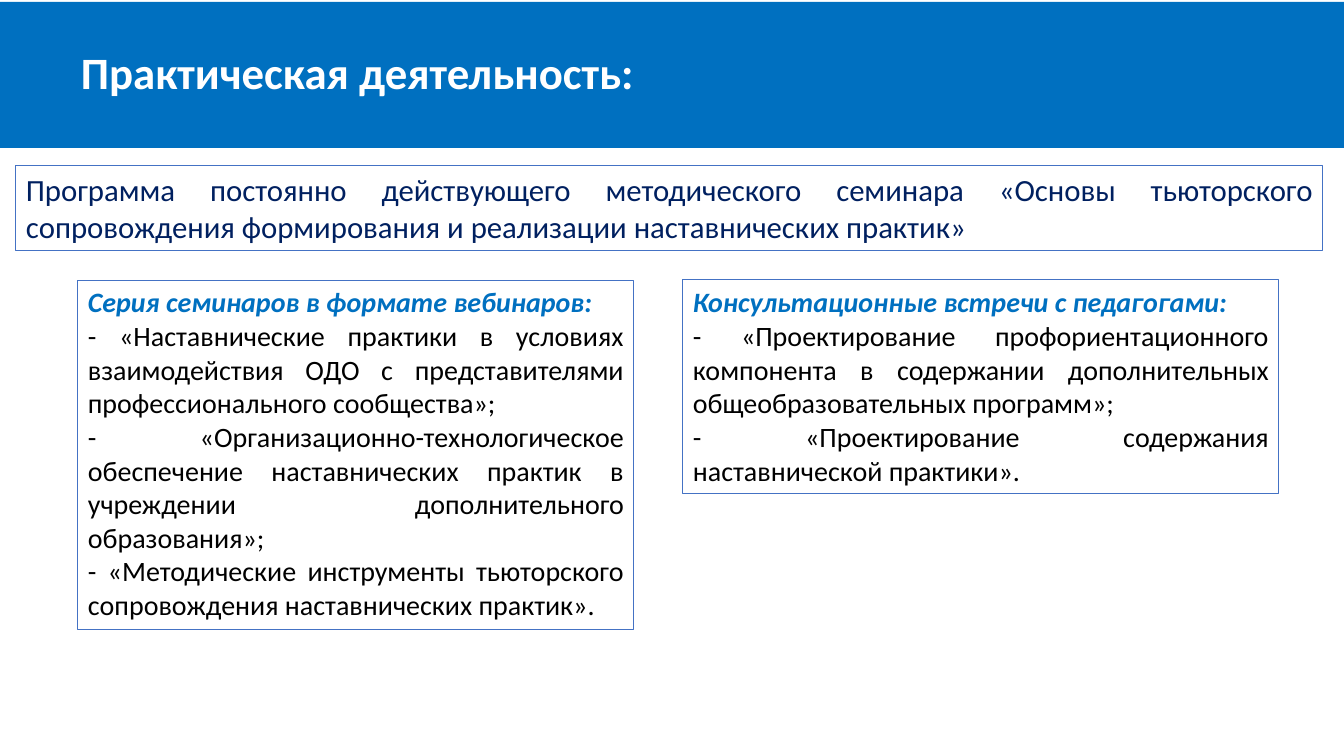
from pptx import Presentation
from pptx.dml.color import RGBColor as RGB
from pptx.enum.text import MSO_ANCHOR as Anchor, MSO_AUTO_SIZE as Fit, PP_ALIGN as Align
from pptx.util import Pt

PX = 914400 / 100.8
BLUE = RGB(0x00, 0x70, 0xC0)
NAVY = RGB(0x00, 0x20, 0x60)
EDGE = RGB(0x44, 0x72, 0xC4)
BLACK = RGB(0, 0, 0)
WHITE = RGB(255, 255, 255)

BANNER = {"size": Pt(32), "bold": True, "color": WHITE}
LEAD = {"size": Pt(22), "color": NAVY}
HEAD = {"size": Pt(20), "bold": True, "italic": True, "color": BLUE}
BODY = {"size": Pt(20), "color": BLACK}

WEBINARS = [
    "Серия семинаров в формате вебинаров:",
    "- «Наставнические практики в условиях взаимодействия ОДО с представителями "
    "профессионального сообщества»;",
    "- «Организационно-технологическое обеспечение наставнических практик в учреждении "
    "дополнительного образования»;",
    "- «Методические инструменты тьюторского сопровождения наставнических практик».",
]
MEETINGS = [
    "Консультационные встречи с педагогами:",
    "- «Проектирование профориентационного компонента в содержании дополнительных "
    "общеобразовательных программ»;",
    "- «Проектирование содержания наставнической практики».",
]


def px(count):
    """Turn whole pixels into EMU."""
    return round(count * PX)


class Deck:
    """Hold the style and the current slide."""

    font = "Calibri"

    def __init__(self, width, height):
        """Open a deck with one title-only slide."""
        self.file = Presentation()
        self.file.slide_width, self.file.slide_height = px(width), px(height)
        self.slide = self.file.slides.add_slide(self.file.slide_layouts[5])

    def fill(self, para, text, style, align):
        """Fill one paragraph with one styled run."""
        para.alignment = align
        run = para.add_run()
        run.text = text
        run.font.name = self.font
        for name, value in style.items():
            if name == "color":
                run.font.color.rgb = value
            else:
                setattr(run.font, name, value)

    def title(self, text, area, indent):
        """Place the title as a filled banner."""
        shape = self.slide.shapes.title
        shape.left, shape.top, shape.width, shape.height = map(px, area)
        shape.fill.solid()
        shape.fill.fore_color.rgb = BLUE
        frame = shape.text_frame
        frame.margin_left = px(indent)
        frame.vertical_anchor = Anchor.MIDDLE
        frame.auto_size = Fit.NONE
        para = frame.paragraphs[0]
        para.line_spacing = 0.9
        self.fill(para, text, BANNER, Align.LEFT)

    def box(self, area, lines, first, rest=BODY):
        """Add an outlined box of justified paragraphs."""
        shape = self.slide.shapes.add_textbox(*map(px, area))
        shape.line.color.rgb = EDGE
        shape.line.width = Pt(0.75)
        frame = shape.text_frame
        frame.word_wrap = True
        frame.auto_size = Fit.SHAPE_TO_FIT_TEXT
        for index, text in enumerate(lines):
            para = frame.add_paragraph() if index else frame.paragraphs[0]
            self.fill(para, text, rest if index else first, Align.JUSTIFY)


def main():
    """Build and save the slide."""
    deck = Deck(1344, 756)
    deck.title("Практическая деятельность:", (0, 2, 1344, 146), 81)
    deck.box((16, 166, 1307, 85), [
        "Программа постоянно действующего методического семинара «Основы тьюторского "
        "сопровождения формирования и реализации наставнических практик»"], LEAD)
    deck.box((78, 280, 556, 350), WEBINARS, HEAD)
    deck.box((683, 280, 596, 214), MEETINGS, HEAD)
    deck.file.save("out.pptx")


if __name__ == "__main__":
    main()
